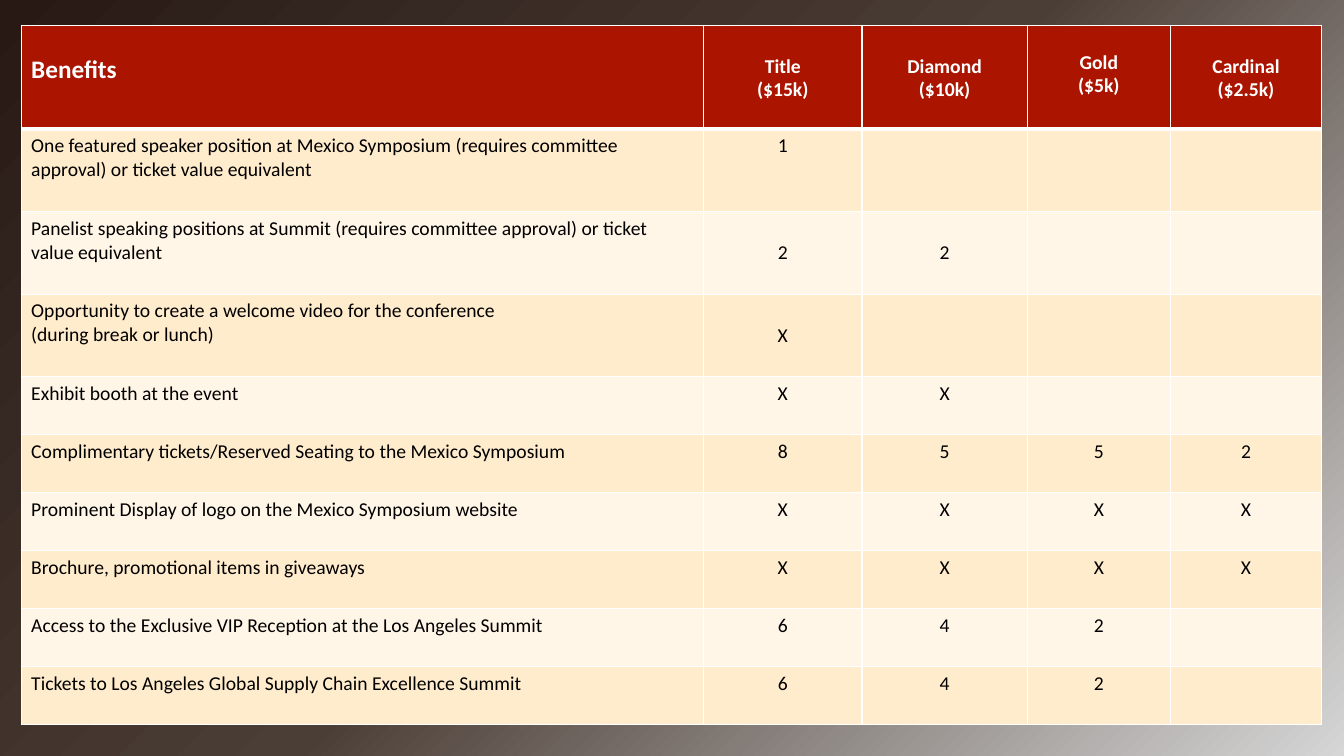
from lxml import etree
from pptx import Presentation, util as u
from pptx.dml.color import RGBColor
from pptx.enum import text
from pptx.oxml import ns

RED = RGBColor(0xAB, 0x15, 0x00)
PEACH = RGBColor(0xFF, 0xEC, 0xCC)
CREAM = RGBColor(0xFF, 0xF6, 0xE7)
WHITE = RGBColor(0xFF, 0xFF, 0xFF)
BLACK = RGBColor(0x00, 0x00, 0x00)
SILVER = RGBColor(0xD6, 0xD6, 0xD6)
BROWN = RGBColor(0x4B, 0x3E, 0x36)
UMBER = RGBColor(0x28, 0x19, 0x15)

FONT = "Calibri"
LEFT, TOP = 0.21, 0.25
COLUMNS = [6.77, 1.57, 1.64, 1.42, 1.5]
HEADER_ROW, TALL_ROW, SHORT_ROW = 1.03, 0.82, 0.575
TALL_COUNT = 3
INSET, LOWERED = 0.05, 0.29  # top margins: first text line, second text line

HEADINGS = ["Benefits", "Title\n($15k)", "Diamond\n($10k)", "Gold\n($5k)", "Cardinal\n($2.5k)"]
HEADING_INSETS = [LOWERED, LOWERED, LOWERED, 0.25, LOWERED]

# benefit, top margin of its values, values by sponsor level
BENEFITS = [
    ("One featured speaker position at Mexico Symposium (requires committee approval) "
     "or ticket value equivalent", INSET, ["1", "", "", ""]),
    ("Panelist speaking positions at Summit (requires committee approval) "
     "or ticket value equivalent", LOWERED, ["2", "2", "", ""]),
    ("Opportunity to create a welcome video for the conference\n(during break or lunch)",
     LOWERED, ["X", "", "", ""]),
    ("Exhibit booth at the event", INSET, ["X", "X", "", ""]),
    ("Complimentary tickets/Reserved Seating to the Mexico Symposium", INSET, ["8", "5", "5", "2"]),
    ("Prominent Display of logo on the Mexico Symposium website", INSET, ["X"] * 4),
    ("Brochure, promotional items in giveaways", INSET, ["X"] * 4),
    ("Access to the Exclusive VIP Reception at the Los Angeles Summit", INSET, ["6", "4", "2", ""]),
    ("Tickets to Los Angeles Global Supply Chain Excellence Summit", INSET, ["6", "4", "2", ""]),
]


def add_element(parent, tag, **attributes):
    return etree.SubElement(parent, ns.qn(tag), attributes)


def paint_background(slide):
    """Radial gradient spreading from the bottom right corner."""
    slide.background.fill.gradient()
    gradient = slide.background.fill._fill._gradFill
    for part in list(gradient):
        gradient.remove(part)
    stops = add_element(gradient, "a:gsLst")
    for position, color in ((0, SILVER), (50, BROWN), (100, UMBER)):
        stop = add_element(stops, "a:gs", pos=str(position * 1000))
        add_element(stop, "a:srgbClr", val=str(color))
    circle = add_element(gradient, "a:path", path="circle")
    add_element(circle, "a:fillToRect", l="100000", t="100000")


def add_borders(cell, top=1, bottom=1):
    properties = cell._tc.get_or_add_tcPr()
    for side, width in (("L", 1), ("R", 1), ("T", top), ("B", bottom)):
        line = add_element(properties, f"a:ln{side}", w=str(u.Pt(width)))
        solid = add_element(line, "a:solidFill")
        add_element(solid, "a:srgbClr", val=str(WHITE))


def write_cell(cell, wording, color, size=14, bold=False, centred=True, inset=INSET):
    cell.margin_top = u.Inches(inset)
    frame = cell.text_frame
    for index, line in enumerate(wording.split("\n")):
        paragraph = frame.add_paragraph() if index else frame.paragraphs[0]
        paragraph.alignment = text.PP_ALIGN.CENTER if centred else text.PP_ALIGN.LEFT
        if not line:
            paragraph.font.size = u.Pt(size)
            continue
        run = paragraph.add_run()
        run.text = line
        run.font.name = FONT
        run.font.size = u.Pt(size)
        run.font.bold = bold
        run.font.color.rgb = color


def fill_cell(cell, color):
    cell.fill.solid()
    cell.fill.fore_color.rgb = color


def add_benefits_table(slide):
    heights = [HEADER_ROW] + [TALL_ROW] * TALL_COUNT
    heights += [SHORT_ROW] * (len(BENEFITS) - TALL_COUNT)
    table = slide.shapes.add_table(
        len(heights), len(COLUMNS), u.Inches(LEFT), u.Inches(TOP),
        u.Inches(sum(COLUMNS)), u.Inches(sum(heights))).table
    for column, width in zip(table.columns, COLUMNS):
        column.width = u.Inches(width)
    for row, height in zip(table.rows, heights):
        row.height = u.Inches(height)

    for column, (heading, inset) in enumerate(zip(HEADINGS, HEADING_INSETS)):
        cell = table.cell(0, column)
        add_borders(cell, bottom=3)
        fill_cell(cell, RED)
        write_cell(cell, heading, WHITE, size=14 if column else 18, bold=True,
                   centred=column > 0, inset=inset)

    for row, (benefit, value_inset, values) in enumerate(BENEFITS, start=1):
        for column, wording in enumerate([benefit] + values):
            cell = table.cell(row, column)
            add_borders(cell, top=3 if row == 1 else 1)
            fill_cell(cell, PEACH if row % 2 else CREAM)
            write_cell(cell, wording, BLACK, centred=column > 0,
                       inset=value_inset if column else INSET)


def main():
    deck = Presentation()
    deck.slide_width, deck.slide_height = u.Inches(13.33), u.Inches(7.5)
    slide = deck.slides.add_slide(deck.slide_layouts.get_by_name("Blank"))
    paint_background(slide)
    add_benefits_table(slide)
    deck.save("out.pptx")


if __name__ == "__main__":
    main()
